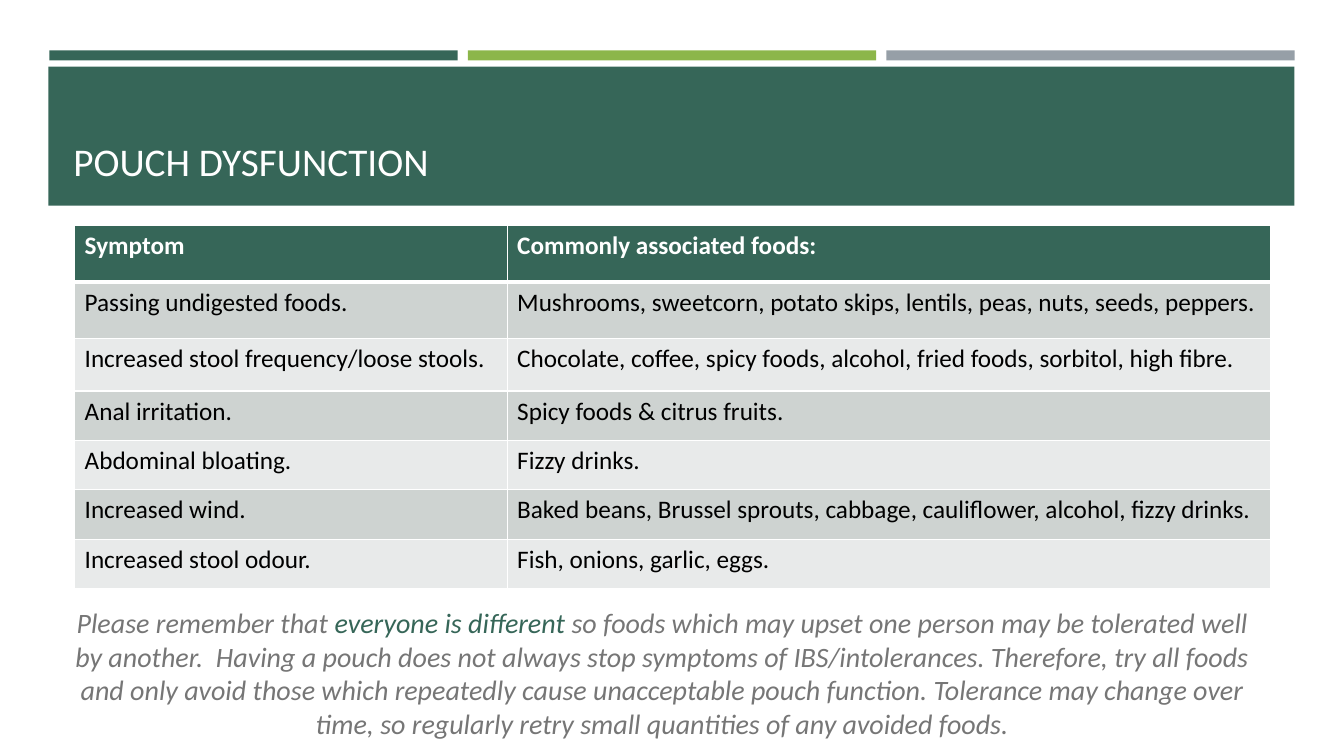
from lxml import etree
from pptx import Presentation
from pptx.dml.color import RGBColor
from pptx.enum.shapes import MSO_SHAPE
from pptx.enum.text import MSO_ANCHOR, PP_ALIGN
from pptx.oxml.ns import qn
from pptx.util import Inches, Pt

RECTANGLE = MSO_SHAPE.RECTANGLE
BOTTOM, TOP = MSO_ANCHOR.BOTTOM, MSO_ANCHOR.TOP
CENTER, LEFT = PP_ALIGN.CENTER, PP_ALIGN.LEFT

FONT = "Calibri"
GREEN, LIME, GREY = "366658", "8CB64A", "969FA7"
WHITE, BLACK, MUTED = "FFFFFF", "000000", "767676"
BANDS = ("CED3D1", "E8EAEA")

COLUMN_WIDTHS = (4.29, 7.57)
ROW_HEIGHTS = (0.56, 0.56, 0.52, 0.49, 0.49, 0.49, 0.49)
SYMPTOM_ROWS = (
    ("Symptom", "Commonly associated foods:"),
    ("Passing undigested foods.",
     "Mushrooms, sweetcorn, potato skips, lentils, peas, nuts, seeds, peppers."),
    ("Increased stool frequency/loose stools.",
     "Chocolate, coffee, spicy foods, alcohol, fried foods, sorbitol, high fibre."),
    ("Anal irritation.", "Spicy foods & citrus fruits."),
    ("Abdominal bloating.", "Fizzy drinks."),
    ("Increased wind.",
     "Baked beans, Brussel sprouts, cabbage, cauliflower, alcohol, fizzy drinks."),
    ("Increased stool odour.", "Fish, onions, garlic, eggs."),
)
ADVICE = (
    ("Please remember that ", MUTED),
    ("everyone is different ", GREEN),
    ("so foods which may upset one person may be tolerated well by another.  "
     "Having a pouch does not always stop symptoms of IBS/intolerances. "
     "Therefore, try all foods and only avoid those which repeatedly cause "
     "unacceptable pouch function. Tolerance may change over time, so regularly "
     "retry small quantities of any avoided foods.", MUTED),
)


def color(value):
    return RGBColor.from_string(value)


def set_font(font, size, value, bold=False, italic=False):
    font.name = FONT
    font.size = Pt(size)
    font.bold = bold
    font.italic = italic
    font.color.rgb = color(value)


def add_block(page, box, fill):
    block = page.shapes.add_shape(RECTANGLE, *map(Inches, box))
    block.shadow.inherit = False
    block.fill.solid()
    block.fill.fore_color.rgb = color(fill)
    block.line.fill.background()


def add_paragraph_box(page, box, anchor, alignment):
    frame = page.shapes.add_textbox(*map(Inches, box)).text_frame
    frame.word_wrap = True
    frame.vertical_anchor = anchor
    para = frame.paragraphs[0]
    para.alignment = alignment
    return para


def add_stripes(page, box):
    left, top, width, height = box
    gap = 0.1
    stripe = (width - 2 * gap) / 3
    for index, fill in enumerate((GREEN, LIME, GREY)):
        add_block(page, (left + index * (stripe + gap), top, stripe, height), fill)


def add_header(page, box):
    left, top, width, height = box
    add_block(page, box, GREEN)
    title_box = (left + 0.15, top + 0.14, width - 0.3, height - 0.3)
    para = add_paragraph_box(page, title_box, BOTTOM, LEFT)
    para.text = "POUCH DYSFUNCTION"
    set_font(para.font, 28, WHITE)


def set_borders(cell, widths):
    properties = cell._tc.get_or_add_tcPr()
    for position, (side, width) in enumerate(widths.items()):
        line = etree.Element(qn(f"a:{side}"), w=str(Pt(width)))
        fill = etree.SubElement(line, qn("a:solidFill"))
        etree.SubElement(fill, qn("a:srgbClr"), val=WHITE)
        properties.insert(position, line)


def add_symptom_table(page, box):
    frame = page.shapes.add_table(
        len(SYMPTOM_ROWS), len(COLUMN_WIDTHS), *map(Inches, box))
    table = frame.table
    for column, width in zip(table.columns, COLUMN_WIDTHS):
        column.width = Inches(width)
    for index, (row, height, texts) in enumerate(
            zip(table.rows, ROW_HEIGHTS, SYMPTOM_ROWS)):
        row.height = Inches(height)
        heading = index == 0
        for cell, text in zip(row.cells, texts):
            cell.text = text
            para = cell.text_frame.paragraphs[0]
            set_font(para.font, 18, WHITE if heading else BLACK, bold=heading)
            cell.fill.solid()
            cell.fill.fore_color.rgb = color(
                GREEN if heading else BANDS[(index - 1) % 2])
            set_borders(cell, {"lnL": 1, "lnR": 1,
                               "lnT": 3 if index == 1 else 1,
                               "lnB": 3 if heading else 1})


def add_advice(page, box):
    para = add_paragraph_box(page, box, TOP, CENTER)
    para.space_after = Pt(6)
    for text, value in ADVICE:
        span = para.add_run()
        span.text = text
        set_font(span.font, 20, value, italic=True)


def build_slide(deck):
    page = deck.slides.add_slide(deck.slide_layouts[6])
    add_stripes(page, (0.49, 0.5, 12.35, 0.1))
    add_header(page, (0.48, 0.66, 12.36, 1.38))
    add_symptom_table(page, (0.74, 2.24, sum(COLUMN_WIDTHS), sum(ROW_HEIGHTS)))
    add_advice(page, (0.54, 5.96, 12.06, 0.87))


def main():
    deck = Presentation()
    deck.slide_width = Inches(13.33)
    deck.slide_height = Inches(7.5)
    build_slide(deck)
    deck.save("out.pptx")


if __name__ == "__main__":
    main()
